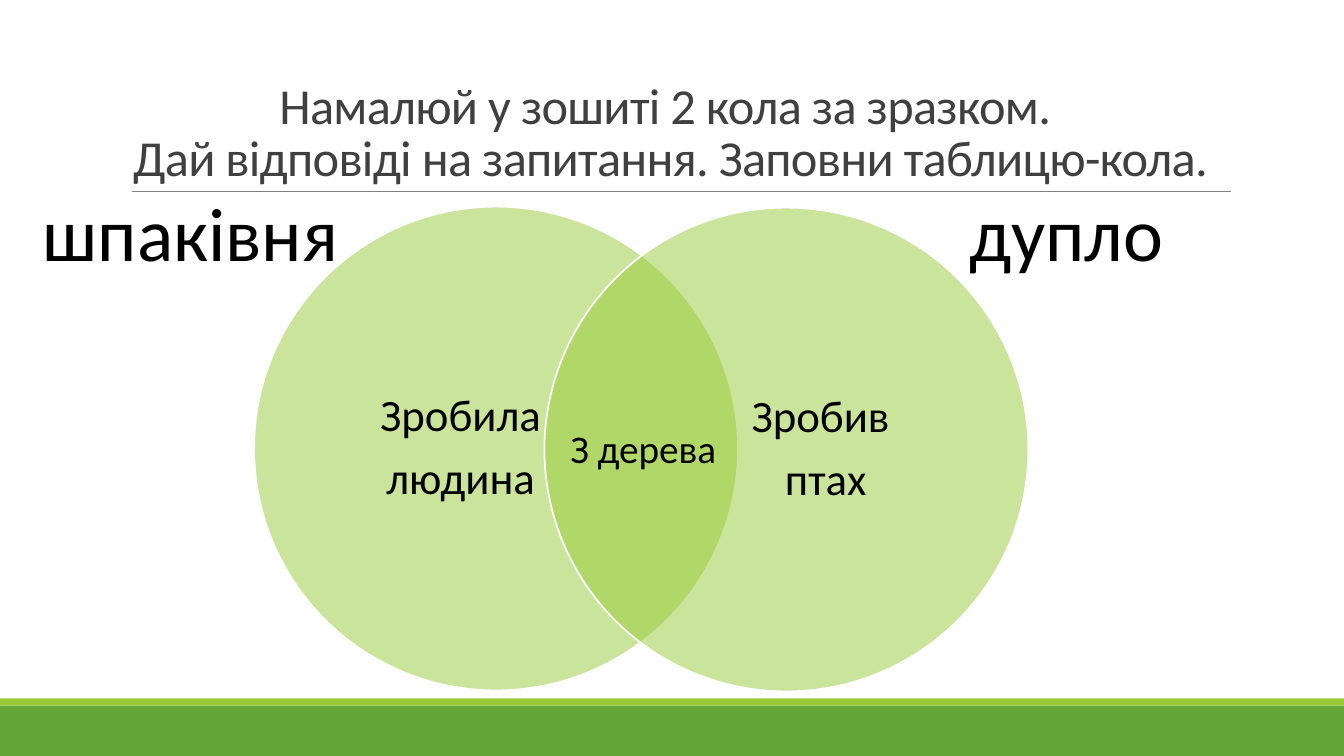
from lxml import etree
from pptx import Presentation
from pptx.dml.color import RGBColor
from pptx.enum.shapes import MSO_CONNECTOR, MSO_SHAPE
from pptx.enum.text import MSO_ANCHOR, MSO_AUTO_SIZE, PP_ALIGN
from pptx.oxml.ns import qn
from pptx.util import Inches, Pt

LINE = MSO_CONNECTOR.STRAIGHT
RECT, OVAL = MSO_SHAPE.RECTANGLE, MSO_SHAPE.OVAL
TOP, MID, LOW = MSO_ANCHOR.TOP, MSO_ANCHOR.MIDDLE, MSO_ANCHOR.BOTTOM
NOFIT, GROW = MSO_AUTO_SIZE.NONE, MSO_AUTO_SIZE.SHAPE_TO_FIT_TEXT
CENTER = PP_ALIGN.CENTER

HEX = {"green": "63A537", "lime": "99CB38", "rule": "808080",
       "title": "404040", "text": "000000", "white": "FFFFFF"}
WIDE, HIGH = 13.33, 7.5


def color(name):
    return RGBColor.from_string(HEX[name])


def apply(item, props):
    for key, value in props.items():
        setattr(item, key, value)


def place(shape, box):
    names = ("left", "top", "width", "height")
    apply(shape, dict(zip(names, map(Inches, box))))


def write(shape, lines, size, ink, frame, para):
    """Fill a shape with centred paragraphs."""
    text = shape.text_frame
    apply(text, frame)
    text.text = "\n".join(lines)
    for item in text.paragraphs:
        apply(item, {"alignment": CENTER, **para})
        for run in item.runs:
            apply(run.font, {"name": "Calibri", "size": Pt(size)})
            run.font.color.rgb = color(ink)


def draw(slide, kind, box, fill):
    shape = slide.shapes.add_shape(kind, *map(Inches, box))
    shape.shadow.inherit = False
    shape.fill.solid()
    shape.fill.fore_color.rgb = color(fill)
    shape.line.fill.background()
    return shape


def add_base(slide, box):
    """Footer bands: a thin lime strip over a green bar."""
    x, y, w, h = box
    strip = 0.07
    draw(slide, RECT, (x, y + strip, w, h - strip), "green")
    draw(slide, RECT, (x, y, w, strip), "lime")


def add_head(slide, box):
    """Title with the rule along its lower edge."""
    x, y, w, h = box
    title = slide.shapes.title
    place(title, box)
    lines = ["Намалюй у зошиті 2 кола за зразком. \v"
             "Дай відповіді на запитання. Заповни таблицю-кола."]
    write(title, lines, 36, "title",
          {"vertical_anchor": LOW, "auto_size": NOFIT, "word_wrap": True},
          {"line_spacing": 0.85})
    for run in title.text_frame.paragraphs[0].runs:
        run.font._element.set("spc", "-50")
    ends = (x + 0.35, y + h, x + w - 0.13, y + h)
    rule = slide.shapes.add_connector(LINE, *map(Inches, ends))
    rule.line.color.rgb = color("rule")
    rule.line.width = Pt(0.5)
    etree.SubElement(rule._element.spPr, qn("a:effectLst"))


def add_ring(slide, box, lines, shift):
    """Half-clear circle with its own text box."""
    x, y, w, h = box
    ring = draw(slide, OVAL, box, "lime")
    tint = ring._element.spPr.find(".//" + qn("a:srgbClr"))
    etree.SubElement(tint, qn("a:alpha")).set("val", "50000")
    ring.line.color.rgb = color("white")
    ring.line.width = Pt(1.25)
    area = (x + shift, y + 0.57, 2.76, 3.66)
    note = slide.shapes.add_textbox(*map(Inches, area))
    sides = ("margin_left", "margin_top", "margin_right", "margin_bottom")
    write(note, lines, 32, "text",
          {"vertical_anchor": MID, "word_wrap": True, **dict.fromkeys(sides, 0)},
          {"line_spacing": 0.9, "space_after": Pt(11)})


def add_label(slide, box, text, size):
    label = slide.shapes.add_textbox(*map(Inches, box))
    write(label, [text], size, "text",
          {"vertical_anchor": TOP, "word_wrap": False, "auto_size": GROW}, {})


def add_venn(slide, box):
    """Two crossing circles, their names and the shared part."""
    x, y, w, h = box
    size = 4.8
    right = x + w - size
    add_ring(slide, (x, y, size, size), ["Зробила", "людина"], 0.67)
    add_ring(slide, (right, y + 0.01, size, size), ["Зробив", " птах"], 1.36)
    add_label(slide, (x - 2.21, y - 0.26, 3.16, 1.01), "шпаківня", 54)
    add_label(slide, (right + 4.11, y - 0.26, 2.14, 1.01), "дупло", 54)
    add_label(slide, (right + 0.15, y + 2.11, 1.66, 0.57), "З дерева", 28)


def main():
    deck = Presentation()
    apply(deck, {"slide_width": Inches(WIDE), "slide_height": Inches(HIGH)})
    slide = deck.slides.add_slide(deck.slide_layouts[5])
    add_base(slide, (0, 6.93, WIDE, 0.57))
    add_head(slide, (0.96, 0.31, 11.38, 1.59))
    add_venn(slide, (2.52, 2.05, 7.68, 4.81))
    deck.save("out.pptx")


if __name__ == "__main__":
    main()
